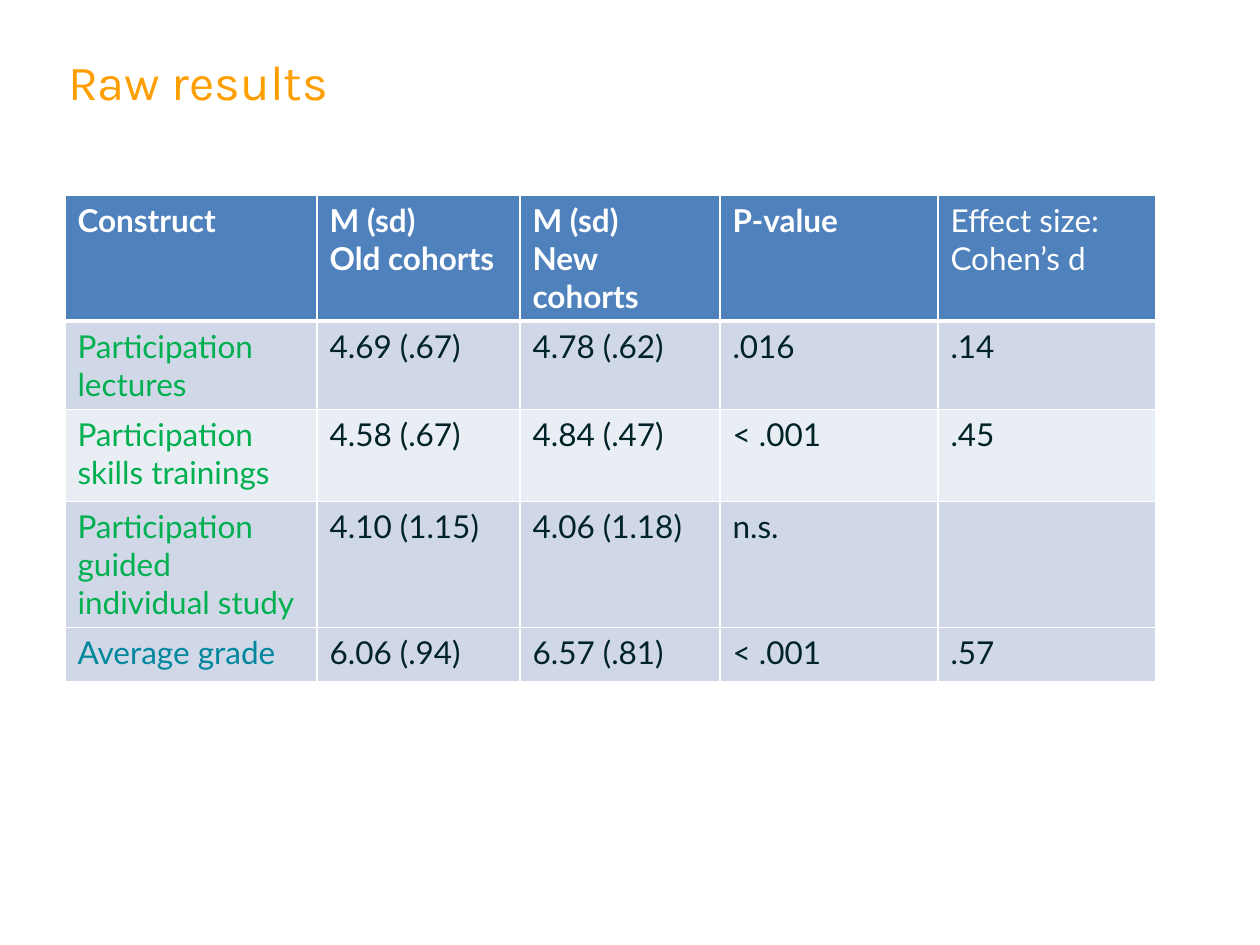
import pptx
import pptx.util
import pptx.dml.color
import pptx.enum.text
import pptx.oxml
import pptx.oxml.ns

PX = 914400 / 126
COLORS = {
    "title": "FF9E00", "header": "4F81BD", "white": "FFFFFF",
    "band": "D0D8E8", "light": "E9EDF4", "text": "002328",
    "participation": "00B050", "grade": "00879E",
}


def style_font(font, face, size, color, bold=False):
    font.name = face
    font.size = pptx.util.Pt(size)
    font.bold = bold
    font.color.rgb = pptx.dml.color.RGBColor.from_string(COLORS[color])


def add_borders(cell, top, bottom):
    """Draw white cell borders; top and bottom widths are in points."""
    for side, width in (("L", 1), ("R", 1), ("T", top), ("B", bottom)):
        cell._tc.get_or_add_tcPr().append(pptx.oxml.parse_xml(
            f'<a:ln{side} {pptx.oxml.ns.nsdecls("a")} w="{pptx.util.Pt(width)}">'
            f'<a:solidFill><a:srgbClr val="{COLORS["white"]}"/></a:solidFill>'
            f'</a:ln{side}>'))


prs = pptx.Presentation()
prs.slide_width = pptx.util.Inches(10)
prs.slide_height = pptx.util.Inches(7.5)
slide = prs.slides.add_slide(prs.slide_layouts[5])

title = slide.shapes.title
title.left, title.top, title.width, title.height = (
    round(length * PX) for length in (68, 54, 1126, 115))
heading = title.text_frame
heading.margin_left = heading.margin_top = 0
heading.margin_right = heading.margin_bottom = 0
heading.vertical_anchor = pptx.enum.text.MSO_ANCHOR.TOP
heading.text = "Raw results"
heading.paragraphs[0].alignment = pptx.enum.text.PP_ALIGN.LEFT
heading.paragraphs[0].line_spacing = pptx.util.Pt(32)
style_font(heading.paragraphs[0].runs[0].font, "Karla", 28, "title")

results = [
    ["Construct", "M (sd)\vOld cohorts", "M (sd)\vNew cohorts", "P-value",
     "Effect size: Cohen’s d"],
    ["Participation lectures", "4.69 (.67)", "4.78 (.62)", ".016", ".14"],
    ["Participation skills trainings", "4.58 (.67)", "4.84 (.47)", "< .001", ".45"],
    ["Participation guided individual study", "4.10 (1.15)", "4.06 (1.18)", "n.s.", ""],
    ["Average grade", "6.06 (.94)", "6.57 (.81)", "< .001", ".57"],
]
column_widths = [252, 203, 200, 218, 218]
row_heights = [92, 54, 92, 54, 54]
row_fills = ["header", "band", "light", "band", "band"]
construct_colors = ["white"] + ["participation"] * 3 + ["grade"]

table = slide.shapes.add_table(
    len(results), len(column_widths), round(65 * PX), round(195 * PX),
    round(sum(column_widths) * PX), round(sum(row_heights) * PX)).table
for column, width in zip(table.columns, column_widths):
    column.width = round(width * PX)

for r, values in enumerate(results):
    table.rows[r].height = round(row_heights[r] * PX)
    for c, value in enumerate(values):
        cell = table.cell(r, c)
        add_borders(cell, top=3 if r == 1 else 1, bottom=3 if r == 0 else 1)
        cell.fill.solid()
        cell.fill.fore_color.rgb = pptx.dml.color.RGBColor.from_string(
            COLORS[row_fills[r]])
        cell.text_frame.text = ""
        entry = cell.text_frame.paragraphs[0]
        entry.text = value
        color = "white" if r == 0 else construct_colors[r] if c == 0 else "text"
        style_font(entry.font, "Lato", 18, color)
        for run in entry.runs:
            style_font(run.font, "Lato", 18, color, bold=r == 0 and c < 4)

prs.save("out.pptx")
